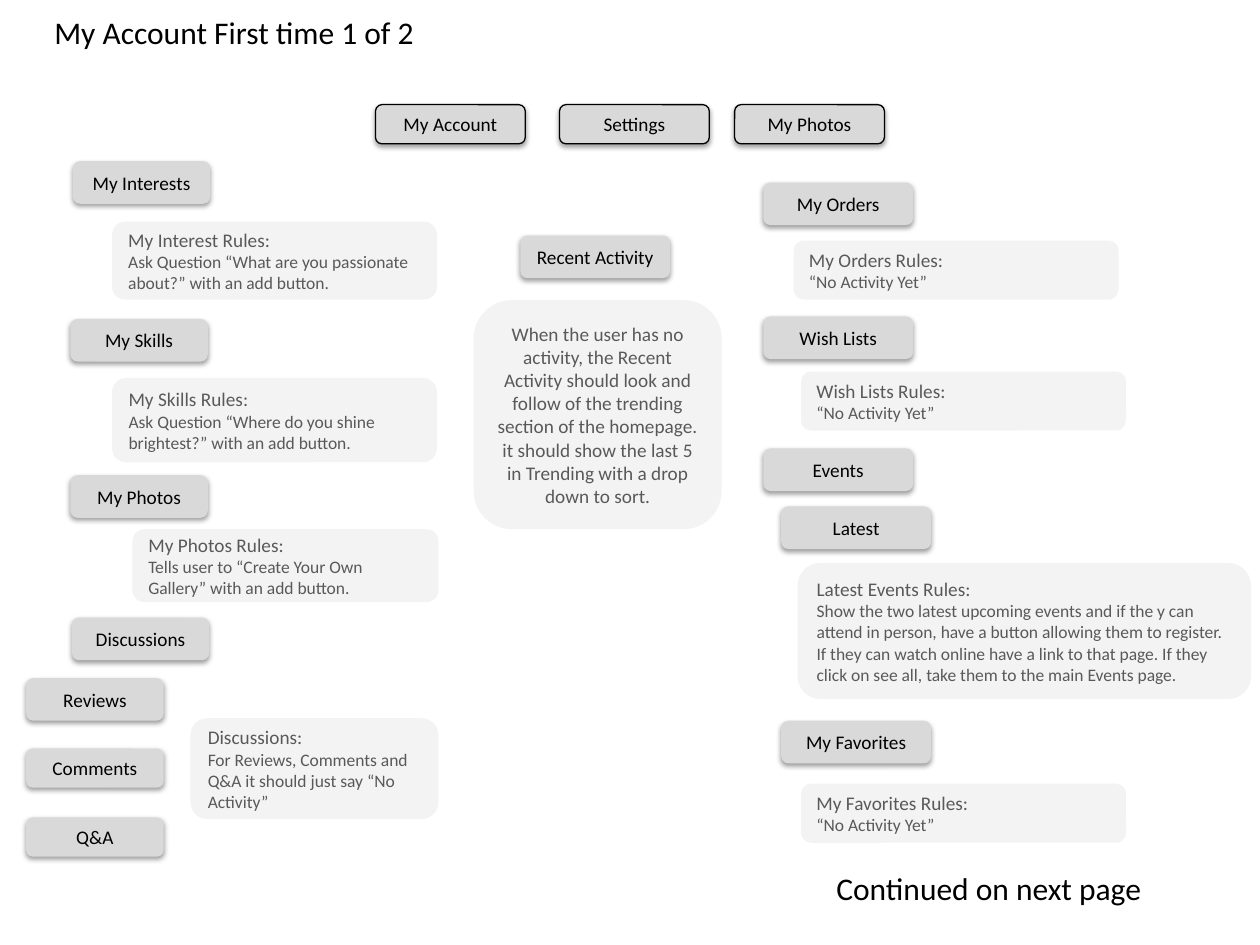
from dataclasses import dataclass

from lxml.etree import SubElement
from pptx import Presentation
from pptx.dml.color import RGBColor
from pptx.enum.shapes import MSO_SHAPE as Preset
from pptx.enum.text import MSO_ANCHOR as Anchor, PP_ALIGN as Align
from pptx.oxml.ns import qn
from pptx.shapes.autoshape import Shape
from pptx.slide import Slide
from pptx.text.text import TextFrame
from pptx.util import Cm, Pt

BLACK = RGBColor(0x00, 0x00, 0x00)
BUTTON_GRAY = RGBColor(0xD9, 0xD9, 0xD9)
NOTE_GRAY = RGBColor(0xF3, 0xF3, 0xF3)
NOTE_TEXT = RGBColor(0x59, 0x59, 0x59)
FONT = "Calibri"
NARROW, WIDE = 2.77, 3.02
LOW, HIGH = 0.79, 0.86
NO_ACTIVITY = "“No Activity Yet”"


@dataclass(frozen=True)
class Button:
    label: str
    left: float
    top: float
    width: float = WIDE
    height: float = HIGH
    outlined: bool = False


@dataclass(frozen=True)
class Note:
    heading: str
    body: str
    left: float
    top: float
    width: float = 6.55
    height: float = 1.19


TABS = [
    Button(label, left, 2.11, height=LOW, outlined=True)
    for label, left in (("My Account", 7.57), ("Settings", 11.28), ("My Photos", 14.81))
]
BUTTONS = [
    Button("My Interests", 1.47, 3.25, NARROW),
    Button("My Skills", 1.42, 6.43, NARROW),
    Button("My Photos", 1.42, 9.58, NARROW),
    Button("Discussions", 1.45, 12.45, NARROW),
    Button("Reviews", 0.53, 13.67, NARROW),
    Button("Comments", 0.53, 15.09, NARROW, LOW),
    Button("Q&A", 0.53, 16.48, NARROW, LOW),
    Button("Recent Activity", 10.49, 4.75),
    Button("My Orders", 15.39, 3.68),
    Button("Wish Lists", 15.39, 6.38),
    Button("Events", 15.39, 9.04),
    Button("Latest", 15.75, 10.21),
    Button("My Favorites", 15.75, 14.53),
]
NOTES = [
    Note("My Interest Rules:",
         "Ask Question “What are you passionate about?” with an add button.",
         2.26, 4.47, height=1.57),
    Note("My Skills Rules:",
         "Ask Question “Where do you shine brightest?” with an add button.",
         2.26, 7.62, height=1.7),
    Note("My Photos Rules:",
         "Tells user to “Create Your Own Gallery” with an add button.",
         2.67, 10.67, 6.17, 1.47),
    Note("Discussions:",
         "For Reviews, Comments and Q&A it should just say “No Activity”",
         3.84, 14.48, 5, 2.03),
    Note("My Orders Rules:", NO_ACTIVITY, 16, 4.85),
    Note("Wish Lists Rules:", NO_ACTIVITY, 16.15, 7.49),
    Note("Latest Events Rules:",
         "Show the two latest upcoming events and if the y can attend in person, "
         "have a button allowing them to register. If they can watch online have "
         "a link to that page. If they click on see all, take them to the main "
         "Events page.",
         16.08, 11.35, 9.14, 2.74),
    Note("My Favorites Rules:", NO_ACTIVITY, 16.15, 15.8),
]
RECENT_ACTIVITY = (
    "When the user has no activity, the Recent Activity should look and follow "
    "of the trending section of the homepage. it should show the last 5 in "
    "Trending with a drop down to sort."
)


def write_text(frame: TextFrame, lines: list[str], sizes: list[float],
               color: RGBColor, align: Align = Align.LEFT) -> None:
    frame.text = "\n".join(lines)
    for paragraph, size in zip(frame.paragraphs, sizes):
        paragraph.alignment = align
        for run in paragraph.runs:
            run.font.name = FONT
            run.font.size = Pt(size)
            run.font.color.rgb = color


def add_box(slide: Slide, left: float, top: float, width: float,
            height: float, fill: RGBColor) -> Shape:
    shape = slide.shapes.add_shape(
        Preset.ROUNDED_RECTANGLE, Cm(left), Cm(top), Cm(width), Cm(height))
    shape.shadow.inherit = False
    shape.fill.solid()
    shape.fill.fore_color.rgb = fill
    shape.line.fill.background()
    shape.text_frame.word_wrap = True
    shape.text_frame.vertical_anchor = Anchor.MIDDLE
    return shape


def add_shadow(shape: Shape) -> None:
    effects = shape.element.spPr.find(qn("a:effectLst"))
    shadow = SubElement(effects, qn("a:outerShdw"), blurRad=str(Pt(3.1)),
                        dist=str(Pt(1.6)), dir="5400000", rotWithShape="0")
    color = SubElement(shadow, qn("a:srgbClr"), val=str(BLACK))
    SubElement(color, qn("a:alpha"), val="38000")


def add_button(slide: Slide, button: Button) -> None:
    shape = add_box(slide, button.left, button.top, button.width,
                    button.height, BUTTON_GRAY)
    if button.outlined:
        shape.line.color.rgb = BLACK
        shape.line.width = Pt(0.75)
    add_shadow(shape)
    write_text(shape.text_frame, [button.label], [11], BLACK, Align.CENTER)


def add_note(slide: Slide, note: Note) -> None:
    shape = add_box(slide, note.left, note.top, note.width, note.height, NOTE_GRAY)
    write_text(shape.text_frame, [note.heading, note.body], [11, 10], NOTE_TEXT)


def main() -> None:
    presentation = Presentation()
    presentation.slide_width, presentation.slide_height = Cm(25.4), Cm(19.05)
    slide = presentation.slides.add_slide(presentation.slide_layouts[5])

    title = slide.shapes.title
    title.left, title.top, title.width, title.height = Cm(0.84), Cm(0.08), Cm(7.95), Cm(1.14)
    title.text_frame.vertical_anchor = Anchor.MIDDLE
    write_text(title.text_frame, ["My Account First time 1 of 2"], [18], BLACK)

    for button in TABS + BUTTONS:
        add_button(slide, button)
    for note in NOTES:
        add_note(slide, note)

    activity = add_box(slide, 9.55, 6.05, 5, 4.62, NOTE_GRAY)
    write_text(activity.text_frame, [RECENT_ACTIVITY], [11], NOTE_TEXT, Align.CENTER)

    footer = slide.shapes.add_textbox(Cm(16.61), Cm(17.4), Cm(6.73), Cm(2.41))
    footer.text_frame.word_wrap = False
    write_text(footer.text_frame, ["Continued on next page"], [18], BLACK)

    presentation.save("out.pptx")


if __name__ == "__main__":
    main()
